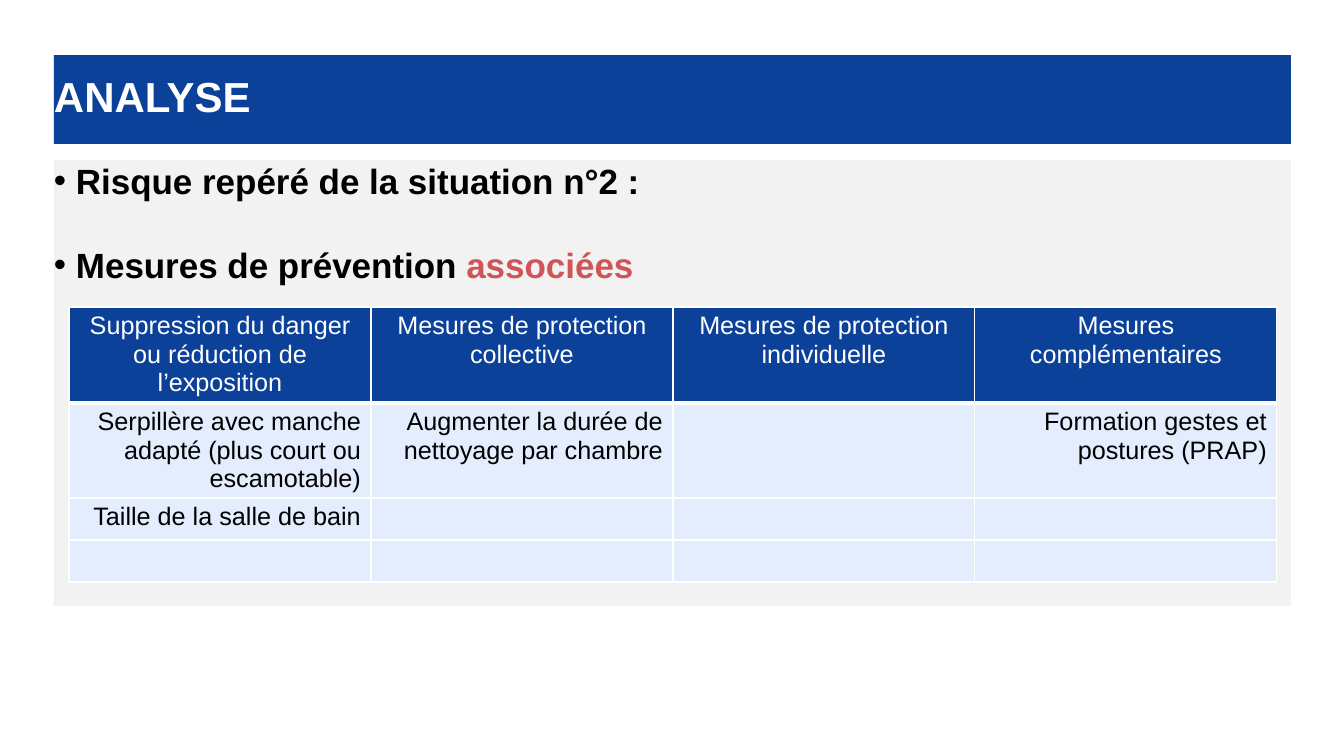
from lxml.etree import SubElement
from pptx import Presentation
from pptx.dml.color import RGBColor
from pptx.enum.shapes import MSO_SHAPE
from pptx.enum.text import MSO_ANCHOR, PP_ALIGN
from pptx.oxml.ns import qn
from pptx.util import Emu, Pt

TITLE = "ANALYSE"
BULLETS = [
    [("Risque repéré de la situation n°2 :", False)],
    [("Mesures de prévention ", False), ("associées", True)],
]
TABLE = [
    ["Suppression du danger ou réduction de l’exposition",
     "Mesures de protection collective",
     "Mesures de protection individuelle",
     "Mesures complémentaires"],
    ["Serpillère avec manche adapté (plus court ou escamotable)",
     "Augmenter la durée de nettoyage par chambre",
     "",
     "Formation gestes et postures (PRAP)"],
    ["Taille de la salle de bain", "", "", ""],
    ["", "", "", ""],
]

BLUE = RGBColor(0x0C, 0x41, 0x9A)
PALE_BLUE = RGBColor(0xE3, 0xED, 0xFD)
GREY = RGBColor(0xF2, 0xF2, 0xF2)
RED = RGBColor(0xD0, 0x55, 0x59)
WHITE = RGBColor(0xFF, 0xFF, 0xFF)
BLACK = RGBColor(0, 0, 0)

PX = 914400 / 100.8
LEFT, WIDTH = 54, 1237
TITLE_TOP, TITLE_HEIGHT = 55, 89
BODY_TOP, BODY_HEIGHT = 160, 446
TABLE_LEFT, TABLE_TOP, COLUMN_WIDTH = 69, 307, 302
ROW_HEIGHTS = [96, 95, 42, 42]
BULLET_INDENT = 22


def px(n):
    return Emu(round(n * PX))


def add_text(p, text, size=18, color=BLACK, bold=False):
    r = p.add_run()
    r.text = text
    r.font.name, r.font.size, r.font.bold = "Arial", Pt(size), bold
    r.font.color.rgb = color


def add_panel(s, top, height, fill, anchor):
    sp = s.shapes.add_shape(MSO_SHAPE.RECTANGLE, px(LEFT), px(top), px(WIDTH), px(height))
    sp.shadow.inherit = False
    sp.fill.solid()
    sp.fill.fore_color.rgb = fill
    sp.line.fill.background()
    tf = sp.text_frame
    tf.word_wrap = True
    tf.vertical_anchor = anchor
    tf.margin_left = tf.margin_right = tf.margin_top = tf.margin_bottom = 0
    return tf


def add_bullet(p):
    pPr = p._p.get_or_add_pPr()
    pPr.set("marL", str(px(BULLET_INDENT)))
    pPr.set("indent", str(-px(BULLET_INDENT)))
    SubElement(pPr, qn("a:buFont"), typeface="Arial")
    SubElement(pPr, qn("a:buChar"), char="•")


def style_cell(cell, fill, bottom):
    tcPr = cell._tc.get_or_add_tcPr()
    for side, width in (("L", 1), ("R", 1), ("T", 1), ("B", bottom)):
        ln = SubElement(tcPr, qn(f"a:ln{side}"), w=str(Pt(width)))
        SubElement(SubElement(ln, qn("a:solidFill")), qn("a:srgbClr"), val=str(WHITE))
    cell.fill.solid()
    cell.fill.fore_color.rgb = fill


def add_measures_table(s):
    columns = len(TABLE[0])
    table = s.shapes.add_table(
        len(TABLE), columns, px(TABLE_LEFT), px(TABLE_TOP),
        px(columns * COLUMN_WIDTH), px(sum(ROW_HEIGHTS))).table
    for column in table.columns:
        column.width = px(COLUMN_WIDTH)
    for i, texts in enumerate(TABLE):
        header = i == 0
        table.rows[i].height = px(ROW_HEIGHTS[i])
        for j, text in enumerate(texts):
            cell = table.cell(i, j)
            style_cell(cell, BLUE if header else PALE_BLUE, 3 if header else 1)
            p = cell.text_frame.paragraphs[0]
            p.alignment = PP_ALIGN.CENTER if header else PP_ALIGN.RIGHT
            if text:
                add_text(p, text, color=WHITE if header else BLACK)


def main():
    prs = Presentation()
    prs.slide_width, prs.slide_height = px(1344), px(756)
    s = prs.slides.add_slide(prs.slide_layouts[6])

    p = add_panel(s, TITLE_TOP, TITLE_HEIGHT, BLUE, MSO_ANCHOR.MIDDLE).paragraphs[0]
    p.alignment = PP_ALIGN.LEFT
    p.line_spacing = Pt(31)
    add_text(p, TITLE, size=30, color=WHITE, bold=True)

    tf = add_panel(s, BODY_TOP, BODY_HEIGHT, GREY, MSO_ANCHOR.TOP)
    for i, parts in enumerate(BULLETS):
        p = tf.add_paragraph() if i else tf.paragraphs[0]
        add_bullet(p)
        p.alignment = PP_ALIGN.LEFT
        p.line_spacing = Pt(30)
        p.space_before = Pt(30 if i else 0)
        for text, accent in parts:
            add_text(p, text, size=25, color=RED if accent else BLACK, bold=True)

    add_measures_table(s)
    prs.save("out.pptx")


if __name__ == "__main__":
    main()
